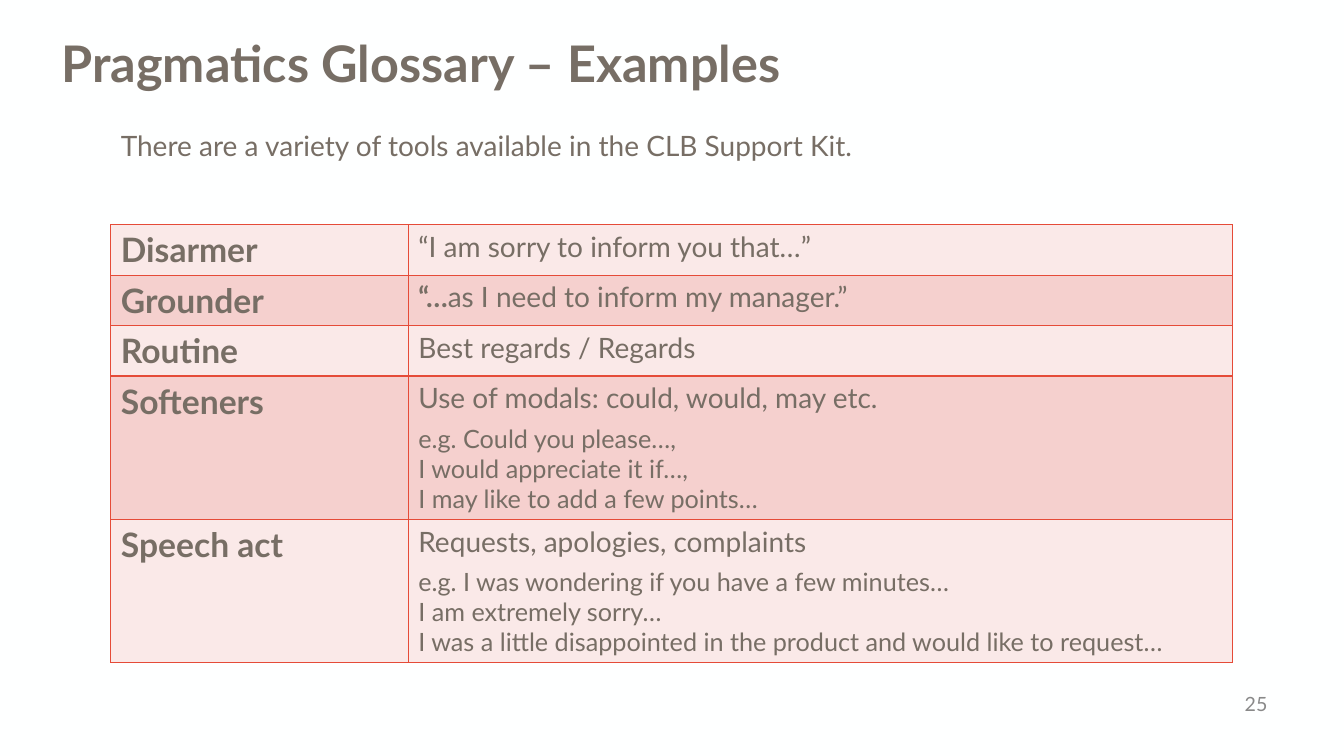
from dataclasses import dataclass
from typing import Any

from lxml.etree import SubElement
from pptx import Presentation
from pptx.dml.color import RGBColor
from pptx.enum.text import MSO_ANCHOR as Anchor, MSO_AUTO_SIZE as AutoSize, PP_ALIGN as Align
from pptx.oxml.ns import qn
from pptx.util import Inches, Pt

WIDTH, HEIGHT = Inches(13.33), Inches(7.5)
FONT = "Lato"
TEXT, PAGE_GREY, BORDER, BACKGROUND = "776E65", "898989", "E54B38", "FEFFFF"
BANDS = ("FAE9E8", "F5D0CE")

# Shares of the slide, in percent
CONTENT_LEFT, CONTENT_WIDTH = 8.25, 84.92
TABLE_TOP = 29.73
COLUMN_WIDTHS = (22.13, 61.35)
SHORT_ROW, TALL_ROW = 6.67, 18.95


@dataclass
class Entry:
    term: str
    meaning: str
    examples: tuple[str, ...] = ()
    bold_lead: str = ""


ENTRIES = [
    Entry("Disarmer", "“I am sorry to inform you that…”"),
    Entry("Grounder", "as I need to inform my manager.”", bold_lead="“…"),
    Entry("Routine", "Best regards / Regards"),
    Entry("Softeners", "Use of modals: could, would, may etc.", (
        "e.g. Could you please…,",
        "I would appreciate it if…,",
        "I may like to add a few points…",
    )),
    Entry("Speech act", "Requests, apologies, complaints", (
        "e.g. I was wondering if you have a few minutes…",
        "I am extremely sorry…",
        "I was a little disappointed in the product and would like to request…",
    )),
]


def across(percent: float) -> int:
    return round(WIDTH * percent / 100)


def down(percent: float) -> int:
    return round(HEIGHT * percent / 100)


def colour(value: str) -> RGBColor:
    return RGBColor.from_string(value)


def apply(target: Any, formats: dict[str, Any]) -> None:
    """Set each named attribute of the target."""
    for name, value in formats.items():
        setattr(target, name, value)


def add_run(paragraph: Any, text: str, size: float, bold: bool = False, fill: str = TEXT) -> None:
    run = paragraph.add_run()
    run.text = text
    apply(run.font, {"name": FONT, "size": Pt(size), "bold": bold})
    run.font.color.rgb = colour(fill)


def place(shape: Any, left: float, top: float, width: float, height: float) -> None:
    apply(shape, {"left": across(left), "top": down(top),
                  "width": across(width), "height": down(height)})


def add_text_box(slide: Any, box: tuple[float, ...], text: str, size: float, fill: str,
                 frame_format: dict[str, Any], paragraph_format: dict[str, Any]) -> None:
    shape = slide.shapes.add_textbox(0, 0, 0, 0)
    place(shape, *box)
    apply(shape.text_frame, {"word_wrap": True, **frame_format})
    paragraph = shape.text_frame.paragraphs[0]
    apply(paragraph, paragraph_format)
    add_run(paragraph, text, size, fill=fill)


def style_cell(cell: Any, fill: str) -> None:
    properties = cell._tc.get_or_add_tcPr()
    for side in ("a:lnL", "a:lnR", "a:lnT", "a:lnB"):
        line = SubElement(properties, qn(side), w=str(Pt(1)))
        SubElement(SubElement(line, qn("a:solidFill")), qn("a:srgbClr"), val=BORDER)
    cell.fill.solid()
    cell.fill.fore_color.rgb = colour(fill)


def fill_row(cells: list[Any], entry: Entry) -> None:
    term_cell, meaning_cell = cells
    add_run(term_cell.text_frame.paragraphs[0], entry.term, 24, bold=True)
    frame = meaning_cell.text_frame
    paragraph = frame.paragraphs[0]
    if entry.bold_lead:
        add_run(paragraph, entry.bold_lead, 20, bold=True)
    add_run(paragraph, entry.meaning, 20)
    if entry.examples:
        paragraph.space_after = Pt(6)
    for example in entry.examples:
        add_run(frame.add_paragraph(), example, 18)


def add_glossary(slide: Any) -> None:
    heights = [TALL_ROW if entry.examples else SHORT_ROW for entry in ENTRIES]
    table = slide.shapes.add_table(
        len(ENTRIES), len(COLUMN_WIDTHS), across(CONTENT_LEFT), down(TABLE_TOP),
        across(sum(COLUMN_WIDTHS)), down(sum(heights))).table
    apply(table, {"first_row": False, "horz_banding": False})
    for column, width in zip(table.columns, COLUMN_WIDTHS):
        column.width = across(width)
    for index, (row, entry, height) in enumerate(zip(table.rows, ENTRIES, heights)):
        row.height = down(height)
        cells = list(row.cells)
        for cell in cells:
            style_cell(cell, BANDS[index % len(BANDS)])
        fill_row(cells, entry)


def add_title(slide: Any, text: str) -> None:
    title = slide.shapes.title
    place(title, 3.83, 4.53, CONTENT_WIDTH, 10.67)
    apply(title.text_frame, {"vertical_anchor": Anchor.TOP, "word_wrap": True,
                             "auto_size": AutoSize.NONE})
    paragraph = title.text_frame.paragraphs[0]
    apply(paragraph, {"alignment": Align.LEFT, "line_spacing": 0.9})
    add_run(paragraph, text, 36, bold=True)


def main() -> None:
    presentation = Presentation()
    apply(presentation, {"slide_width": WIDTH, "slide_height": HEIGHT})
    slide = presentation.slides.add_slide(presentation.slide_layouts.get_by_name("Title Only"))
    slide.background.fill.solid()
    slide.background.fill.fore_color.rgb = colour(BACKGROUND)

    add_title(slide, "Pragmatics Glossary – Examples")
    add_text_box(slide, (CONTENT_LEFT, 16.4, CONTENT_WIDTH, 78.13),
                 "There are a variety of tools available in the CLB Support Kit.", 20, TEXT,
                 {"vertical_anchor": Anchor.TOP}, {"space_after": Pt(12)})
    add_glossary(slide)
    add_text_box(slide, (90.1, 90.4, 4.95, 5.33), "25", 14, PAGE_GREY,
                 {"vertical_anchor": Anchor.MIDDLE}, {"alignment": Align.RIGHT})
    presentation.save("out.pptx")


if __name__ == "__main__":
    main()
